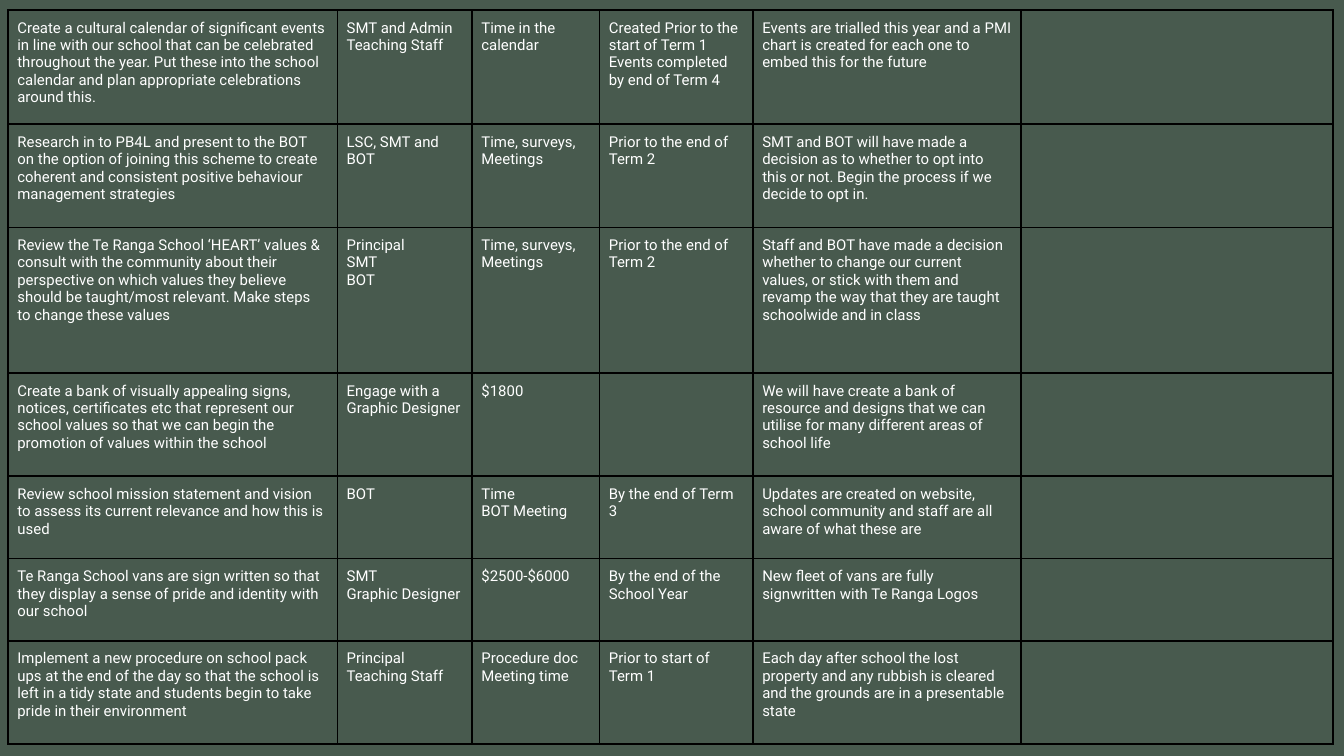
"""Build a slide with the school action plan as a table of tasks, people, resources, dates and outcomes."""
from dataclasses import dataclass

from lxml import etree
from pptx import Presentation
from pptx import util as u
from pptx.dml.color import RGBColor
from pptx.oxml import ns


@dataclass(frozen=True)
class Theme:
    background: str = "485A4E"
    text: str = "FFFFFF"
    border: str = "000000"
    font: str = "Roboto"
    size: int = 8
    border_width: int = 1
    inset: int = 5


theme = Theme()

column_widths = [176.4, 72.2, 68.3, 82.2, 143.7, 167]
row_heights = [61.2, 55.3, 78, 55.4, 44.1, 44.1, 55.4]
plan = [
    [
        "Create a cultural calendar of significant events in line with our school that can be celebrated "
        "throughout the year. Put these into the school calendar and plan appropriate celebrations around this.",
        "SMT and Admin\nTeaching Staff",
        "Time in the calendar",
        "Created Prior to the start of Term 1\nEvents completed by end of Term 4",
        "Events are trialled this year and a PMI chart is created for each one to embed this for the future",
        "",
    ],
    [
        "Research in to PB4L and present to the BOT on the option of joining this scheme to create "
        "coherent and consistent positive behaviour management strategies",
        "LSC, SMT and BOT",
        "Time, surveys, Meetings",
        "Prior to the end of Term 2",
        "SMT and BOT will have made a decision as to whether to opt into this or not. "
        "Begin the process if we decide to opt in.",
        "",
    ],
    [
        "Review the Te Ranga School ‘HEART’ values & consult with the community about their perspective "
        "on which values they believe should be taught/most relevant. Make steps to change these values",
        "Principal\nSMT\nBOT",
        "Time, surveys, Meetings",
        "Prior to the end of Term 2",
        "Staff and BOT have made a decision whether to change our current values, or stick with them "
        "and revamp the way that they are taught schoolwide and in class",
        "",
    ],
    [
        "Create a bank of visually appealing signs, notices, certificates etc that represent our school "
        "values so that we can begin the promotion of values within the school",
        "Engage with a Graphic Designer",
        "$1800",
        "",
        "We will have create a bank of resource and designs that we can utilise for many different "
        "areas of school life",
        "",
    ],
    [
        "Review school mission statement and vision to assess its current relevance and how this is used",
        "BOT",
        "Time\nBOT Meeting",
        "By the end of Term 3",
        "Updates are created on website, school community and staff are all aware of what these are",
        "",
    ],
    [
        "Te Ranga School vans are sign written so that they display a sense of pride and identity with our school",
        "SMT\nGraphic Designer",
        "$2500-$6000",
        "By the end of the School Year",
        "New fleet of vans are fully signwritten with Te Ranga Logos",
        "",
    ],
    [
        "Implement a new procedure on school pack ups at the end of the day so that the school is left "
        "in a tidy state and students begin to take pride in their environment",
        "Principal\nTeaching Staff",
        "Procedure doc\nMeeting time",
        "Prior to start of Term 1",
        "Each day after school the lost property and any rubbish is cleared and the grounds are in a "
        "presentable state",
        "",
    ],
]


def add_borders(cell):
    properties = cell._tc.get_or_add_tcPr()
    for side in ("a:lnL", "a:lnR", "a:lnT", "a:lnB"):
        line = etree.SubElement(properties, ns.qn(side), w=str(u.Pt(theme.border_width)))
        fill = etree.SubElement(line, ns.qn("a:solidFill"))
        etree.SubElement(fill, ns.qn("a:srgbClr"), val=theme.border)


presentation = Presentation()
presentation.slide_width = u.Pt(720)
presentation.slide_height = u.Pt(405)
slide = presentation.slides.add_slide(presentation.slide_layouts[6])
slide.background.fill.solid()
slide.background.fill.fore_color.rgb = RGBColor.from_string(theme.background)

table = slide.shapes.add_table(
    len(row_heights), len(column_widths), u.Pt(4.3), u.Pt(5.3), u.Pt(sum(column_widths)), u.Pt(sum(row_heights))
).table
for name, value in {"first_row": False, "horz_banding": False}.items():
    setattr(table, name, value)
for column, width in zip(table.columns, column_widths):
    column.width = u.Pt(width)

cell_format = {side: u.Pt(theme.inset) for side in ("margin_left", "margin_right", "margin_top", "margin_bottom")}
font_format = {"name": theme.font, "size": u.Pt(theme.size)}

for row, height, entries in zip(table.rows, row_heights, plan):
    row.height = u.Pt(height)
    for cell, entry in zip(row.cells, entries):
        for name, value in cell_format.items():
            setattr(cell, name, value)
        add_borders(cell)
        cell.fill.background()
        if not entry:
            continue
        cell.text = entry
        for paragraph in cell.text_frame.paragraphs:
            for run in paragraph.runs:
                for name, value in font_format.items():
                    setattr(run.font, name, value)
                run.font.color.rgb = RGBColor.from_string(theme.text)

presentation.save("out.pptx")
